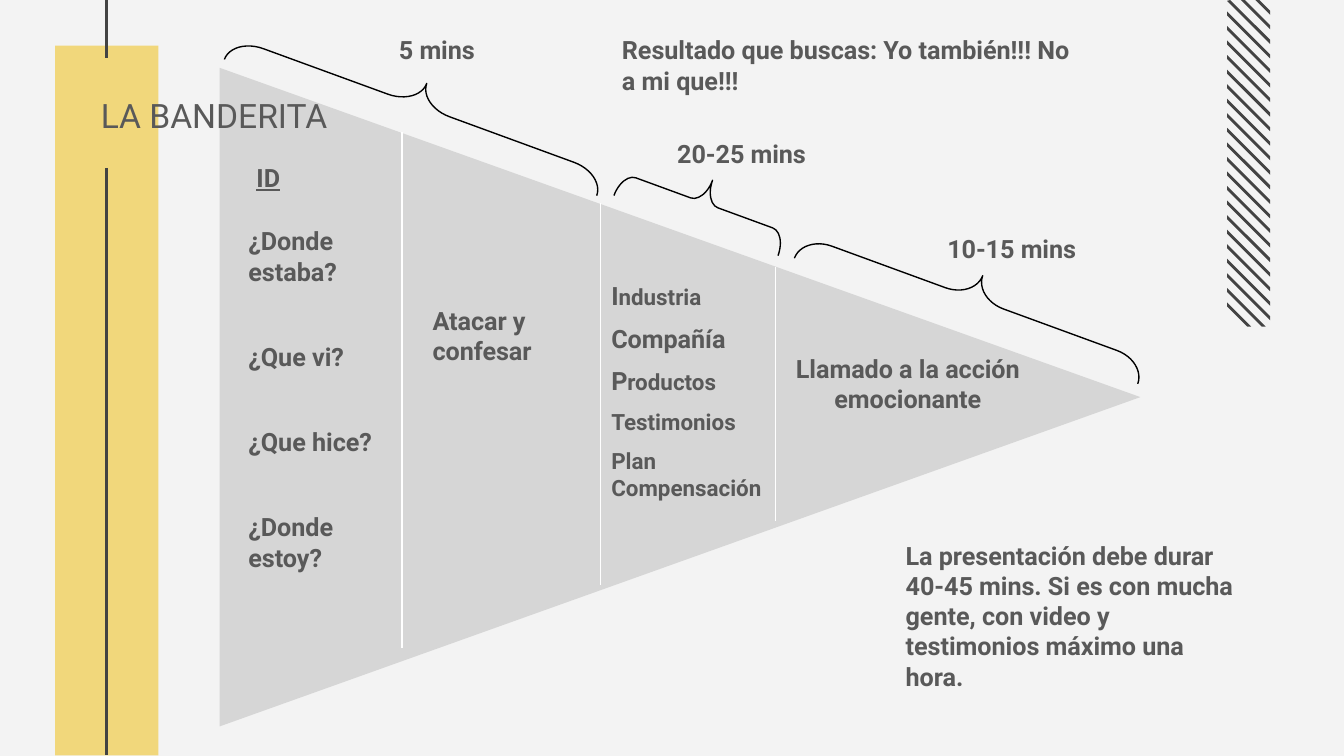
from dataclasses import dataclass

from lxml.etree import SubElement
from pptx import Presentation
from pptx.dml.color import RGBColor
from pptx.enum.shapes import MSO_CONNECTOR, MSO_SHAPE
from pptx.enum.text import MSO_ANCHOR, MSO_AUTO_SIZE, PP_ALIGN
from pptx.oxml.ns import qn
from pptx.util import Inches, Pt

PAPER = RGBColor(0xF3, 0xF3, 0xF3)
YELLOW = RGBColor(0xF1, 0xD7, 0x7B)
DARK = RGBColor(0x43, 0x43, 0x43)
GRAY = RGBColor(0xD6, 0xD6, 0xD6)
INK = RGBColor(0x59, 0x59, 0x59)
WHITE = RGBColor(0xFF, 0xFF, 0xFF)
BLACK = RGBColor(0, 0, 0)
FONT = "Roboto"
BIG, SMALL = 13.5, 12


@dataclass
class Box:
    left: float
    top: float
    width: float
    height: float

    def sides(self) -> list:
        return [Inches(v) for v in (self.left, self.top, self.width, self.height)]


@dataclass
class Run:
    text: str
    size: float = BIG


@dataclass
class Note:
    box: Box
    lines: list[list[Run]]
    gap: float = 6.5
    align: PP_ALIGN = PP_ALIGN.LEFT
    under: bool = False


@dataclass
class Brace:
    box: Box
    curve: float


@dataclass
class Rule:
    x: float
    top: float
    end: float
    color: RGBColor
    width: float


RULES = [
    Rule(0.79, 1.25, 5.62, DARK, 1.5),
    Rule(0.79, 0, 0.43, DARK, 1.5),
]
SPLITS = [
    Rule(2.99, 0.98, 4.82, WHITE, 0.75),
    Rule(4.47, 1.51, 4.35, WHITE, 0.75),
    Rule(5.77, 1.99, 3.88, WHITE, 0.75),
]
BRACES = [
    Brace(Box(5.06, 0.86, 0.36, 1.3), 0.3),
    Brace(Box(2.94, -0.69, 0.35, 2.95), 0.7),
    Brace(Box(7.07, 0.86, 0.36, 2.72), 0.64),
]
NOTES = [
    Note(Box(1.75, 1.63, 1.12, 3.05), [
        [Run("¿Donde estaba?")], [Run("¿Que vi?")],
        [Run("¿Que hice?")], [Run("¿Donde estoy?")],
    ], gap=29.5),
    Note(Box(3.12, 2.22, 1.1, 0.78), [[Run("Atacar y confesar")]]),
    Note(Box(4.45, 2.04, 1.54, 2.12), [
        [Run("I"), Run("ndustria", SMALL)],
        [Run("Compañía")],
        [Run("P"), Run("roductos", SMALL)],
        [Run("Testimonios", SMALL)],
        [Run("Plan Compensación", SMALL)],
    ]),
    Note(Box(5.79, 2.58, 1.93, 1.12), [[Run("Llamado a la acción emocionante")]],
         align=PP_ALIGN.CENTER),
    Note(Box(4.53, 0.21, 3.6, 0.56),
         [[Run("Resultado que buscas: Yo también!!! No a mi que!!!")]]),
    Note(Box(6.95, 1.69, 1.36, 0.33), [[Run("10-15 mins")]]),
    Note(Box(4.94, 0.98, 1.3, 0.33), [[Run("20-25 mins")]]),
    Note(Box(1.81, 1.16, 0.89, 0.33), [[Run("ID")]], under=True),
    Note(Box(6.64, 3.97, 2.72, 1.24), [[Run(
        "La presentación debe durar 40-45 mins. Si es con mucha gente, "
        "con video y testimonios máximo una hora.")]]),
    Note(Box(2.87, 0.21, 1, 0.33), [[Run("5 mins")]]),
]


def paint(shape, color: RGBColor) -> None:
    shape.shadow.inherit = False
    shape.fill.solid()
    shape.fill.fore_color.rgb = color
    shape.line.fill.background()


def draw_rule(shapes, rule: Rule) -> None:
    x = Inches(rule.x)
    line = shapes.add_connector(
        MSO_CONNECTOR.STRAIGHT, x, Inches(rule.top), x, Inches(rule.end))
    line.line.color.rgb = rule.color
    line.line.width = Pt(rule.width)
    SubElement(line.element.spPr, qn("a:effectLst"))


def draw_hatch(shapes, box: Box) -> None:
    """Fill the box with diagonal stripes, cut off at its top and bottom."""
    count, first, last, thick = 24, -0.24, 2.25, 0.03

    def edge(y: float) -> list:
        start, end = max(0, -y), min(box.width, box.height - y)
        return [(Inches(box.left + d), Inches(box.top + y + d)) for d in (start, end)]

    for i in range(count):
        y = first + i * (last - first) / (count - 1)
        points = edge(y) + edge(y + thick)[::-1]
        path = shapes.build_freeform(*points[0])
        path.add_line_segments(points[1:], close=True)
        paint(path.convert_to_shape(), DARK)


def draw_brace(shapes, brace: Brace) -> None:
    shape = shapes.add_shape(MSO_SHAPE.LEFT_BRACE, *brace.box.sides())
    shape.adjustments[0] = brace.curve
    shape.rotation = 110.1
    shape.shadow.inherit = False
    shape.fill.background()
    shape.line.color.rgb = BLACK
    shape.line.width = Pt(0.75)


def style(font, size: float, bold: bool) -> None:
    font.name = FONT
    font.size = Pt(size)
    font.bold = bold
    font.color.rgb = INK


def draw_note(shapes, note: Note) -> None:
    frame = shapes.add_textbox(*note.box.sides()).text_frame
    frame.word_wrap = True
    for i, line in enumerate(note.lines):
        para = frame.add_paragraph() if i else frame.paragraphs[0]
        para.alignment = note.align
        para.space_before = Pt(note.gap if i else 0)
        for part in line:
            run = para.add_run()
            run.text = part.text
            style(run.font, part.size, True)
            if note.under:
                run.font.underline = True


def set_title(shapes, text: str, box: Box) -> None:
    title = shapes.title
    title.left, title.top, title.width, title.height = box.sides()
    frame = title.text_frame
    frame.text = text
    frame.word_wrap = True
    frame.auto_size = MSO_AUTO_SIZE.NONE
    frame.vertical_anchor = MSO_ANCHOR.MIDDLE
    frame.margin_left = frame.margin_right = Inches(0.1)
    frame.margin_top = frame.margin_bottom = Inches(0.1)
    para = frame.paragraphs[0]
    para.alignment = PP_ALIGN.LEFT
    style(para.runs[0].font, 18, False)
    shapes.element.append(title.element)  # bring to front


def main() -> None:
    deck = Presentation()
    deck.slide_width = Inches(10)
    deck.slide_height = deck.slide_width * 9 // 16
    slide = deck.slides.add_slide(deck.slide_layouts[5])
    slide.background.fill.solid()
    slide.background.fill.fore_color.rgb = PAPER
    shapes = slide.shapes

    band = shapes.add_shape(MSO_SHAPE.RECTANGLE, *Box(0.41, 0.34, 0.77, 5.28).sides())
    paint(band, YELLOW)
    for rule in RULES:
        draw_rule(shapes, rule)
    draw_hatch(shapes, Box(9.13, 0, 0.32, 2.43))

    flag = shapes.add_shape(
        MSO_SHAPE.ISOSCELES_TRIANGLE, *Box(2.61, -0.47, 4.9, 6.85).sides())
    flag.rotation = 90
    paint(flag, GRAY)
    for rule in SPLITS:
        draw_rule(shapes, rule)
    for brace in BRACES:
        draw_brace(shapes, brace)
    for note in NOTES:
        draw_note(shapes, note)
    set_title(shapes, "LA BANDERITA", Box(0.65, 0.45, 2.29, 0.81))
    deck.save("out.pptx")


if __name__ == "__main__":
    main()
